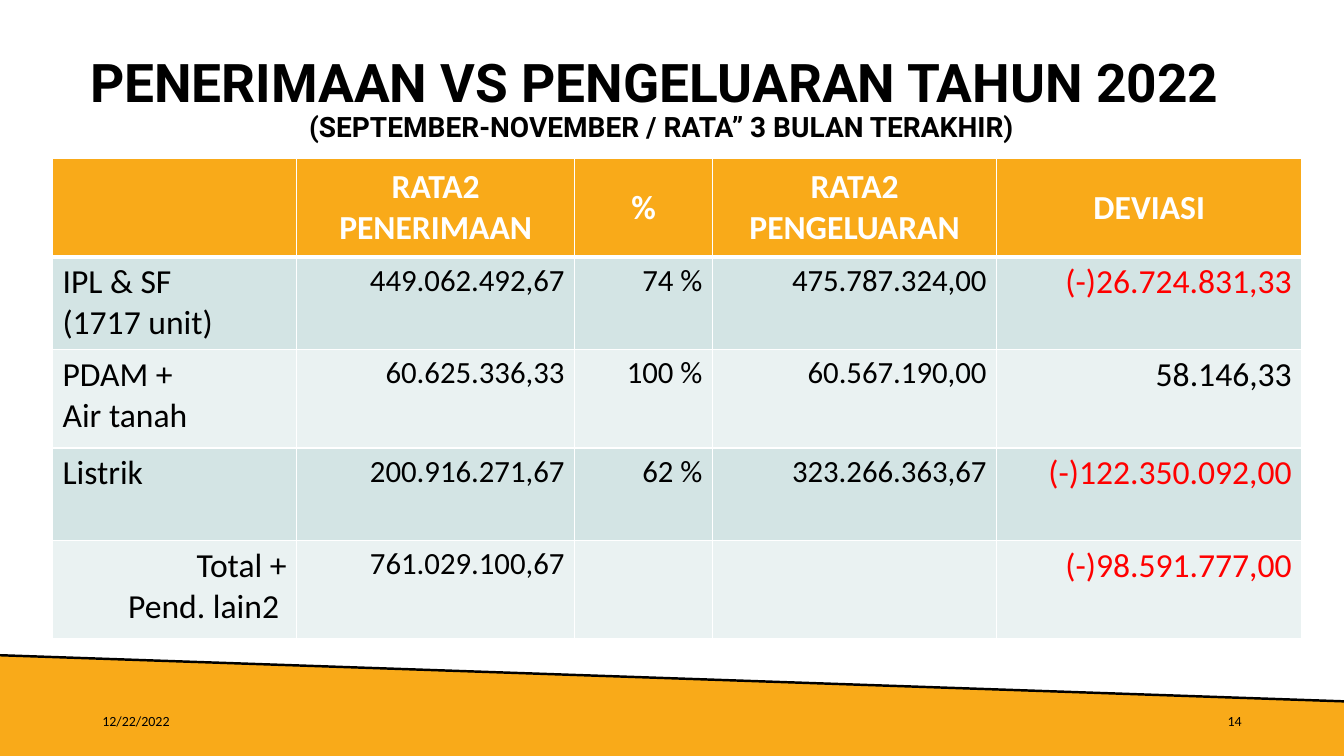
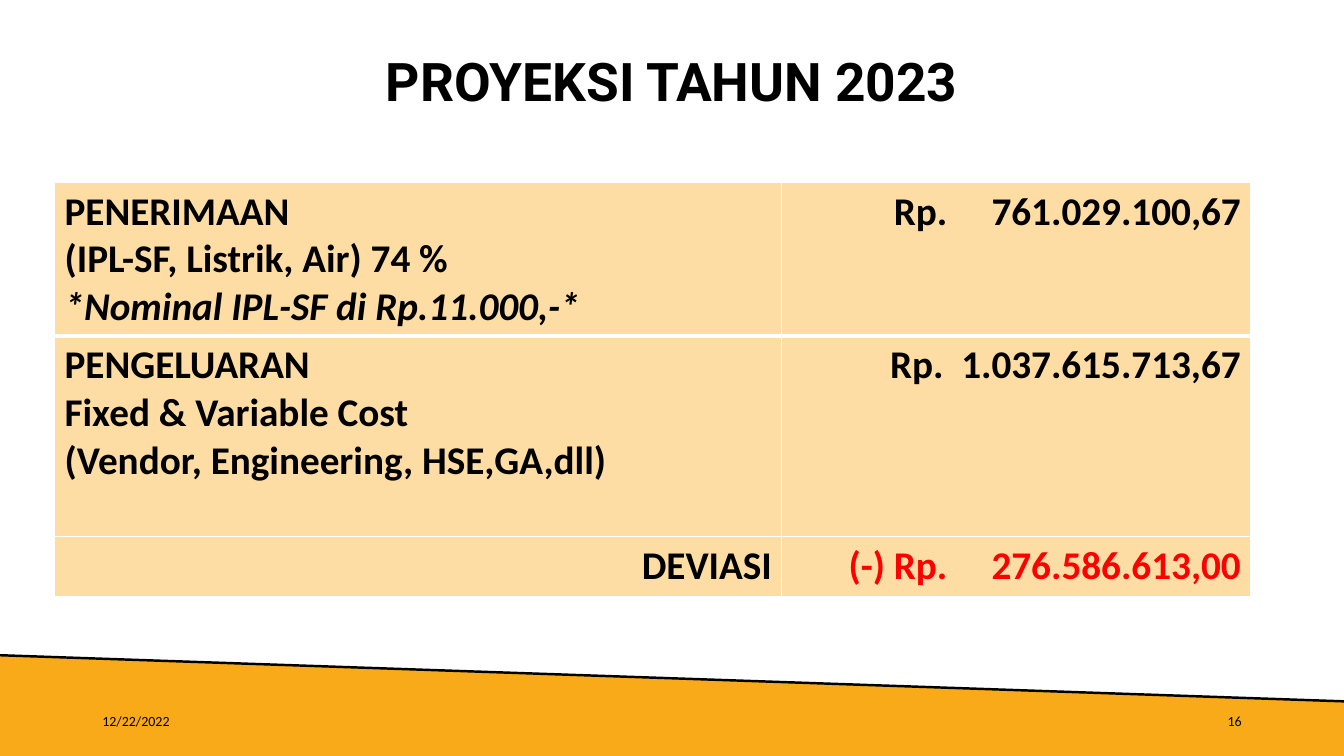
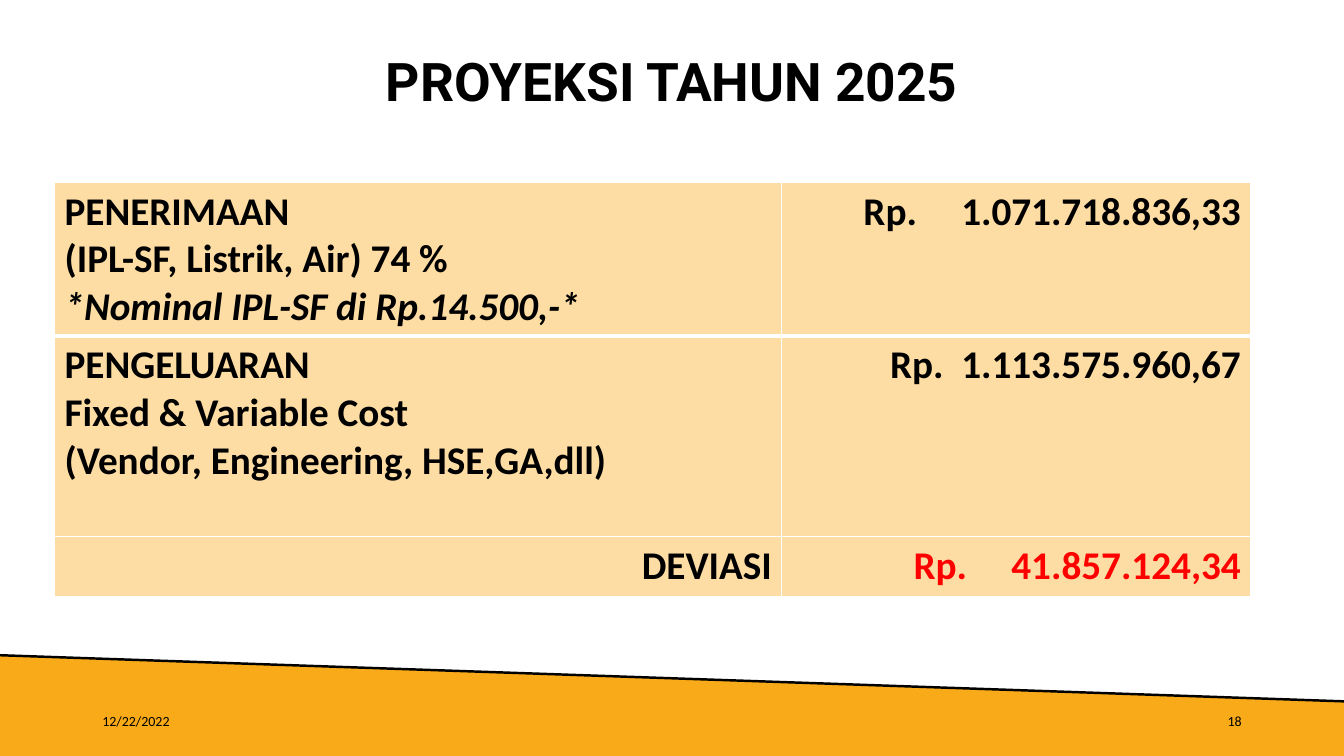
from lxml.etree import SubElement
from pptx import Presentation
from pptx.dml.color import RGBColor
from pptx.enum.text import MSO_ANCHOR, PP_ALIGN
from pptx.oxml.ns import qn
from pptx.util import Pt

WIDTH, HEIGHT = 960, 540
BLACK, WHITE, RED = "000000", "FFFFFF", "FF0000"
ORANGE, PEACH = "F9AA19", "FDDDA3"
BANDS = ["D3E4E4", "EAF2F2"]
TITLE_FONT, BODY_FONT = "Roboto", "Calibri"
LEFT, CENTER, RIGHT = PP_ALIGN.LEFT, PP_ALIGN.CENTER, PP_ALIGN.RIGHT
BAND_LEFT, BAND_RIGHT = (-0.5, 468), (961, 501)
WIDE_GAP, NARROW_GAP = 25.3, 6.3


def rgb(color):
    return RGBColor.from_string(color)


def style(p, size, color=BLACK, bold=False, align=LEFT, name=BODY_FONT):
    p.alignment = align
    p.font.name, p.font.size, p.font.bold = name, Pt(size), bold
    p.font.color.rgb = rgb(color)


def add_text_box(s, left, top, width, height):
    tf = s.shapes.add_textbox(Pt(left), Pt(top), Pt(width), Pt(height)).text_frame
    tf.word_wrap = True
    tf.vertical_anchor = MSO_ANCHOR.MIDDLE
    return tf


def add_title(s, box, title, subtitle=None):
    p = add_text_box(s, *box).paragraphs[0]
    style(p, 38, bold=True, align=CENTER, name=TITLE_FONT)
    p.line_spacing = 0.9
    p.add_run().text = title
    if subtitle:
        p.add_line_break()
        r = p.add_run()
        r.text = subtitle
        r.font.size = Pt(20)


def add_band(s):
    outline = s.shapes.build_freeform(Pt(BAND_LEFT[0]), Pt(BAND_LEFT[1]))
    corners = [BAND_RIGHT, (BAND_RIGHT[0], HEIGHT), (BAND_LEFT[0], HEIGHT)]
    outline.add_line_segments([(Pt(x), Pt(y)) for x, y in corners])
    sp = outline.convert_to_shape()
    sp.shadow.inherit = False
    sp.fill.solid()
    sp.fill.fore_color.rgb = rgb(ORANGE)
    sp.line.fill.background()

    edge = s.shapes.add_connector(1, *[Pt(v) for v in BAND_LEFT + BAND_RIGHT])
    edge.line.color.rgb = rgb(BLACK)
    edge.line.width = Pt(1.75)
    SubElement(edge._element.spPr, qn("a:effectLst"))


def add_footer(s, number):
    for left, text, align in [(66, "12/22/2022", LEFT), (678, str(number), RIGHT)]:
        p = add_text_box(s, left, 500.5, 216, 29).paragraphs[0]
        p.text = text
        style(p, 10, align=align)


def add_slide(prs, number):
    s = prs.slides.add_slide(prs.slide_layouts[6])
    add_band(s)
    add_footer(s, number)
    return s


def set_borders(cell, top, bottom):
    tcPr = cell._tc.get_or_add_tcPr()
    for side, width in [("L", 1), ("R", 1), ("T", top), ("B", bottom)]:
        ln = SubElement(tcPr, qn("a:ln" + side), w=str(Pt(width)))
        SubElement(SubElement(ln, qn("a:solidFill")), qn("a:srgbClr"), val=WHITE)


def add_table(s, left, top, widths, heights, fills):
    """Add an empty table with one fill per row and a thick rule under row one."""
    table = s.shapes.add_table(len(heights), len(widths), Pt(left), Pt(top),
                               Pt(sum(widths)), Pt(sum(heights))).table
    table.first_row = table.horz_banding = False
    for column, width in zip(table.columns, widths):
        column.width = Pt(width)
    for i, (row, height) in enumerate(zip(table.rows, heights)):
        row.height = Pt(height)
        for cell in row.cells:
            set_borders(cell, 3 if i == 1 else 1, 3 if i == 0 else 1)
            cell.fill.solid()
            cell.fill.fore_color.rgb = rgb(fills[i])
    return table


def fill_cell(cell, text, size, **look):
    """Write each line of the text as a paragraph."""
    if not text:
        return
    cell.text = text
    for p in cell.text_frame.paragraphs:
        style(p, size, **look)


def fill_amount(cell, currency, gap, amount, color=BLACK):
    """Write currency and amount, parted by one space widened by gap points."""
    p = cell.text_frame.paragraphs[0]
    style(p, 28, color, True, RIGHT)
    for text in (currency, " ", amount):
        r = p.add_run()
        r.text = text
        if text == " ":
            r._r.get_or_add_rPr().set("spc", str(round(gap * 100)))


def add_comparison(prs):
    s = add_slide(prs, 14)
    add_title(s, (18, 19.5, 909, 104), "PENERIMAAN VS PENGELUARAN TAHUN 2022 ",
              "(SEPTEMBER-NOVEMBER / RATA” 3 BULAN TERAKHIR)")
    headings = ["", "RATA2\nPENERIMAAN", "%", "RATA2 PENGELUARAN", "DEVIASI"]
    rows = [
        ["IPL & SF\n(1717 unit)", "449.062.492,67", "74 %", "475.787.324,00",
         "(-)26.724.831,33"],
        ["PDAM +\nAir tanah", "60.625.336,33", "100 %", "60.567.190,00", "58.146,33"],
        ["Listrik", "200.916.271,67", "62 %", "323.266.363,67", "(-)122.350.092,00"],
        ["Total +\nPend. lain2 ", "761.029.100,67", "", "", "(-)98.591.777,00"],
    ]
    table = add_table(s, 37.5, 113.5, [174.5, 198.5, 98.5, 203, 218],
                      [70, 66, 70.5, 66, 70.5], [ORANGE] + BANDS * 2)
    for cell, heading in zip(table.rows[0].cells, headings):
        cell.vertical_anchor = MSO_ANCHOR.MIDDLE
        fill_cell(cell, heading, 24, color=WHITE, bold=True, align=CENTER)
    for i, (label, *amounts, deviation) in enumerate(rows, 1):
        first, *middle, last = table.rows[i].cells
        fill_cell(first, label, 24, align=RIGHT if i == len(rows) else LEFT)
        for cell, amount in zip(middle, amounts):
            fill_cell(cell, amount, 22, align=RIGHT)
        fill_cell(last, deviation, 24, align=RIGHT,
                  color=RED if deviation.startswith("(-)") else BLACK)


def add_projection(prs, number, year, rate, income, expense, deviation, sign=""):
    s = add_slide(prs, number)
    add_title(s, (66, 8, 828, 104), f"PROYEKSI TAHUN {year}")
    table = add_table(s, 39, 130.5, [519.5, 335], [109.5, 143.5, 43], [PEACH] * 3)
    labels = [
        f"PENERIMAAN\n(IPL-SF, Listrik, Air) 74 %\n*Nominal IPL-SF di Rp.{rate},-*",
        "PENGELUARAN\nFixed & Variable Cost\n(Vendor, Engineering, HSE,GA,dll)",
        "DEVIASI",
    ]
    for i, label in enumerate(labels):
        fill_cell(table.cell(i, 0), label, 28, bold=True, align=RIGHT if i == 2 else LEFT)
    table.cell(0, 0).text_frame.paragraphs[-1].font.italic = True
    fill_amount(table.cell(0, 1), "Rp.", WIDE_GAP, income)
    fill_amount(table.cell(1, 1), "Rp.", NARROW_GAP, expense)
    fill_amount(table.cell(2, 1), sign + "Rp.", WIDE_GAP, deviation, RED)


def main():
    prs = Presentation()
    prs.slide_width, prs.slide_height = Pt(WIDTH), Pt(HEIGHT)
    add_comparison(prs)
    add_projection(prs, 16, 2023, "11.000", "761.029.100,67", "1.037.615.713,67",
                   "276.586.613,00", sign="(-) ")
    add_projection(prs, 18, 2025, "14.500", "1.071.718.836,33", "1.113.575.960,67",
                   "41.857.124,34")
    prs.save("out.pptx")


if __name__ == "__main__":
    main()
